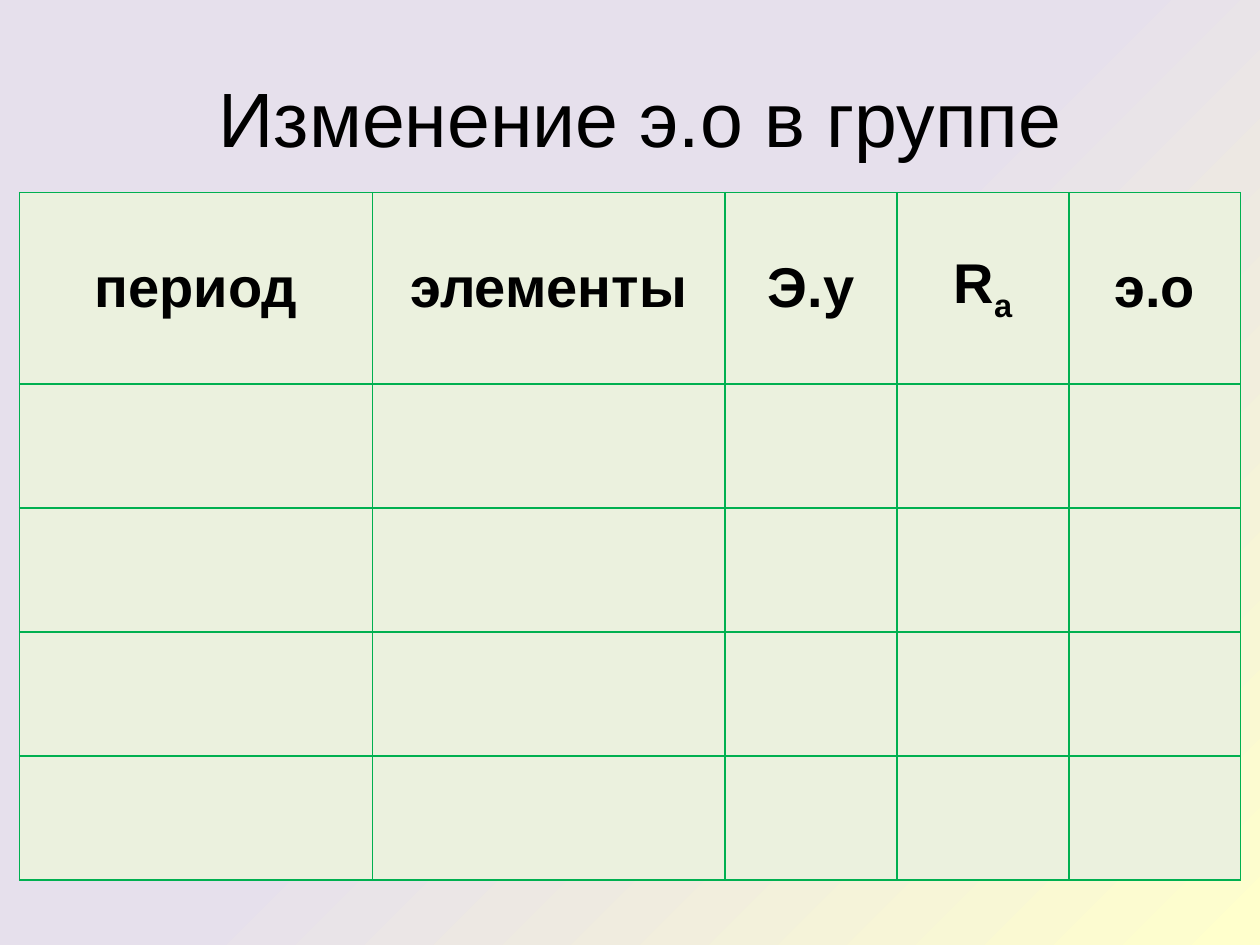
import pptx
import pptx.dml.color
import pptx.enum.text
import pptx.oxml
import pptx.oxml.ns
import pptx.util

Pt = pptx.util.Pt
NAMESPACES = pptx.oxml.ns.nsdecls("a", "p")


def color(hex_value):
    return pptx.dml.color.RGBColor.from_string(hex_value)


def add_text(paragraph, text, size=32, bold=False, baseline=None):
    paragraph.alignment = pptx.enum.text.PP_ALIGN.CENTER
    run = paragraph.add_run()
    run.text = text
    run.font.name = "Arial"
    run.font.size = Pt(size)
    run.font.bold = bold
    run.font.color.rgb = color("000000")
    if baseline is not None:
        run.font._element.set("baseline", str(baseline * 1000))


presentation = pptx.Presentation()
presentation.slide_width, presentation.slide_height = Pt(720), Pt(540)
slide = presentation.slides.add_slide(presentation.slide_layouts[5])

stops = "".join(
    f'<a:gs pos="{position * 1000}"><a:srgbClr val="{value}"/></a:gs>'
    for position, value in [(0, "FFFFCC"), (50, "E6E0EC"), (100, "E6E0EC")]
)
background = pptx.oxml.parse_xml(
    f'<p:bg {NAMESPACES}><p:bgPr><a:gradFill rotWithShape="1"><a:gsLst>{stops}</a:gsLst>'
    '<a:path path="circle"><a:fillToRect l="100000" t="100000"/></a:path>'
    "</a:gradFill><a:effectLst/></p:bgPr></p:bg>"
)
slide._element.cSld.insert(0, background)

title = slide.shapes.title
title.left, title.top, title.width, title.height = Pt(36), Pt(21.6), Pt(648), Pt(90)
title.text_frame.vertical_anchor = pptx.enum.text.MSO_ANCHOR.MIDDLE
add_text(title.text_frame.paragraphs[0], " Изменение э.о в группе", size=44)

headers = [["период"], ["элементы"], ["Э.у"], ["R", "a"], ["э.о"]]
column_widths = [201.6, 201.6, 98.2, 98.2, 98.2]
row_heights = [109.4] + [70.9] * 4
table = slide.shapes.add_table(
    len(row_heights), len(column_widths),
    Pt(11.2), Pt(110), Pt(sum(column_widths)), Pt(sum(row_heights)),
).table
for column, width in zip(table.columns, column_widths):
    column.width = Pt(width)
for row, height in zip(table.rows, row_heights):
    row.height = Pt(height)

for cell in table.iter_cells():
    cell.fill.solid()
    cell.fill.fore_color.rgb = color("EBF1DE")
    properties = cell._tc.get_or_add_tcPr()
    for index, side in enumerate("LRTB"):
        border = pptx.oxml.parse_xml(
            f'<a:ln{side} {NAMESPACES} w="{Pt(1)}"><a:solidFill>'
            f'<a:srgbClr val="00B050"/></a:solidFill></a:ln{side}>'
        )
        properties.insert(index, border)

for column_index, (base, *subscripts) in enumerate(headers):
    cell = table.cell(0, column_index)
    cell.vertical_anchor = pptx.enum.text.MSO_ANCHOR.MIDDLE
    paragraph = cell.text_frame.paragraphs[0]
    add_text(paragraph, base, bold=True)
    for subscript in subscripts:
        add_text(paragraph, subscript, bold=True, baseline=-25)

presentation.save("out.pptx")
